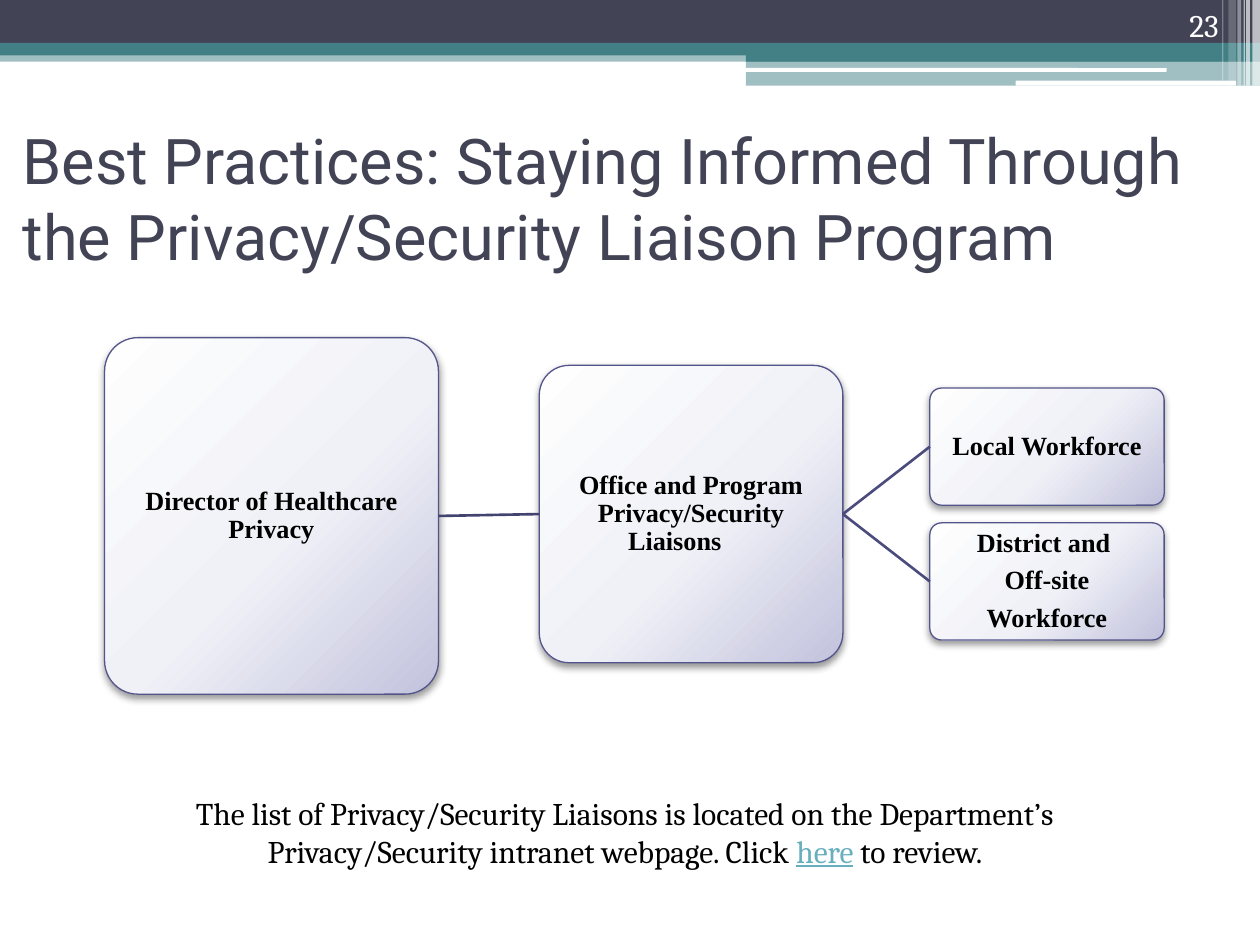
from dataclasses import dataclass

from lxml import etree
from pptx import Presentation
from pptx import util as u
from pptx.dml.color import RGBColor
from pptx.enum import shapes, text
from pptx.oxml import ns, parse_xml

SCALE = 9144
RIGHT_SIDE, LEFT_SIDE = 3, 1


@dataclass(frozen=True)
class Theme:
    navy: str = "424456"
    teal: str = "438086"
    white: str = "FFFFFF"
    black: str = "000000"
    link: str = "67AFBD"
    outline: str = "53548A"
    first_link: str = "42436F"
    branch_link: str = "4B4C7D"
    gradient: tuple = ((0, "FEFEFE"), (55, "F0F1F7"), (100, "C2C2DD"))
    heading_font: str = "Roboto"
    body_font: str = "Cambria"
    box_font: str = "Times New Roman"
    title_size: int = 36
    body_size: int = 18
    box_size: int = 15


def px(*values):
    return [u.Emu(value * SCALE) for value in values]


def add_child(parent, tag, **attributes):
    child = etree.SubElement(parent, ns.qn(tag))
    for name, value in attributes.items():
        child.set(name, str(value))
    return child


class Painter:
    def __init__(self, page, theme):
        self.page = page
        self.theme = theme

    def bar(self, place, color, opacity=100, kind=shapes.MSO_SHAPE.RECTANGLE):
        bar = self.page.shapes.add_shape(kind, *px(*place))
        bar.shadow.inherit = False
        bar.line.fill.background()
        bar.fill.solid()
        bar.fill.fore_color.rgb = RGBColor.from_string(color)
        if opacity < 100:
            tint = bar.element.spPr.find(".//" + ns.qn("a:srgbClr"))
            add_child(tint, "a:alpha", val=opacity * 1000)
        return bar

    def span(self, para, words, font, size, color, bold=False, underline=False):
        span = para.add_run()
        span.text = words
        span.font.name = font
        span.font.size = u.Pt(size)
        span.font.color.rgb = RGBColor.from_string(color)
        span.font.bold = bold
        span.font.underline = underline

    def label(self, place, lines, font, size, align, anchor):
        frame = self.page.shapes.add_textbox(*px(*place)).text_frame
        frame.word_wrap = True
        frame.vertical_anchor = anchor
        for index, spans in enumerate(lines):
            para = frame.add_paragraph() if index else frame.paragraphs[0]
            para.alignment = align
            for words, color, underline in spans:
                self.span(para, words, font, size, color, underline=underline)

    def node(self, place, lines):
        theme = self.theme
        box = self.bar(place, theme.white, kind=shapes.MSO_SHAPE.ROUNDED_RECTANGLE)
        box.adjustments[0] = 0.1
        box.line.color.rgb = RGBColor.from_string(theme.outline)
        box.line.width = u.Pt(0.75)
        self.shade(box)
        frame = box.text_frame
        frame.word_wrap = True
        frame.vertical_anchor = text.MSO_ANCHOR.MIDDLE
        frame.margin_left, frame.margin_top, frame.margin_right, frame.margin_bottom = px(1, 1, 1, 1)
        for index, words in enumerate(lines):
            para = frame.add_paragraph() if index else frame.paragraphs[0]
            para.alignment = text.PP_ALIGN.CENTER
            para.line_spacing = 0.9
            para.space_after = u.Pt(5.25)
            self.span(para, words, theme.box_font, theme.box_size, theme.black, bold=True)
        return box

    def shade(self, box):
        properties = box.element.spPr
        gradient = parse_xml(f'<a:gradFill {ns.nsdecls("a")} rotWithShape="1"/>')
        stops = add_child(gradient, "a:gsLst")
        for position, color in self.theme.gradient:
            stop = add_child(stops, "a:gs", pos=position * 1000)
            add_child(stop, "a:srgbClr", val=color)
        focus = add_child(gradient, "a:path", path="circle")
        add_child(focus, "a:fillToRect", l=-40000, t=-90000, r=140000, b=190000)
        properties.replace(properties.find(ns.qn("a:solidFill")), gradient)
        effects = properties.find(ns.qn("a:effectLst"))
        shadow = add_child(effects, "a:outerShdw", blurRad=u.Pt(4.1), dist=u.Pt(2),
                           dir=5400000, rotWithShape=0)
        tint = add_child(shadow, "a:srgbClr", val=self.theme.black)
        add_child(tint, "a:alpha", val=40000)

    def link(self, start, end, color):
        line = self.page.shapes.add_connector(shapes.MSO_CONNECTOR.STRAIGHT, 0, 0, 0, 0)
        line.begin_connect(start, RIGHT_SIDE)
        line.end_connect(end, LEFT_SIDE)
        line.line.color.rgb = RGBColor.from_string(color)
        line.line.width = u.Pt(1.5)
        add_child(line.element.spPr, "a:effectLst")


def draw_header(painter):
    theme = painter.theme
    bands = [
        ((0, 40, 1000, 9), theme.teal, 50),
        ((0, 0, 1000, 34), theme.navy, 100),
        ((0, 34, 1000, 10), theme.teal, 100),
        ((592, 39, 408, 10), theme.teal, 100),
        ((592, 48, 408, 20), theme.teal, 50),
    ]
    for place, color, opacity in bands:
        painter.bar(place, color, opacity)
    for place in ((591, 54, 335, 3), (806, 64, 175, 4)):
        painter.bar(place, theme.white, kind=shapes.MSO_SHAPE.ROUNDED_RECTANGLE)
    stripes = [(994, 6, 68, 65), (989, 3, 68, 65), (987, 1, 68, 60),
               (982, 3, 68, 40), (975, 6, 64, 20), (970, 1, 64, 30)]
    for left, width, height, opacity in stripes:
        painter.bar((left, 0, width, height), theme.white, opacity)


def draw_chart(painter):
    theme = painter.theme
    director = painter.node((83, 268, 265, 283), ["Director of Healthcare Privacy"])
    liaisons = painter.node((428, 290, 241, 236),
                            ["Office and Program Privacy/Security Liaisons\t"])
    painter.link(director, liaisons, theme.first_link)
    groups = [["Local Workforce"], ["District and ", "Off-site", "Workforce"]]
    for row, lines in enumerate(groups):
        workforce = painter.node((738, 308 + row * 107, 186, 93), lines)
        painter.link(liaisons, workforce, theme.branch_link)


def main():
    theme = Theme()
    deck = Presentation()
    deck.slide_width, deck.slide_height = px(1000, 750)
    page = deck.slides.add_slide(deck.slide_layouts[6])
    painter = Painter(page, theme)
    align, anchor = text.PP_ALIGN, text.MSO_ANCHOR
    draw_header(painter)
    title = "Best Practices: Staying Informed Through the Privacy/Security Liaison Program"
    painter.label((8, 92, 975, 129), [[(title, theme.navy, False)]],
                  theme.heading_font, theme.title_size, align.LEFT, anchor.MIDDLE)
    painter.label((894, 0, 83, 40), [[("23", theme.white, False)]],
                  theme.body_font, theme.body_size, align.RIGHT, anchor.BOTTOM)
    draw_chart(painter)
    note = [
        [("The list of Privacy/Security Liaisons is located on the Department’s",
          theme.black, False)],
        [("Privacy/Security intranet webpage. Click ", theme.black, False),
         ("here", theme.link, True),
         (" to review.", theme.black, False)],
    ]
    painter.label((50, 625, 892, 101), note,
                  theme.body_font, theme.body_size, align.CENTER, anchor.TOP)
    deck.save("out.pptx")


if __name__ == "__main__":
    main()
